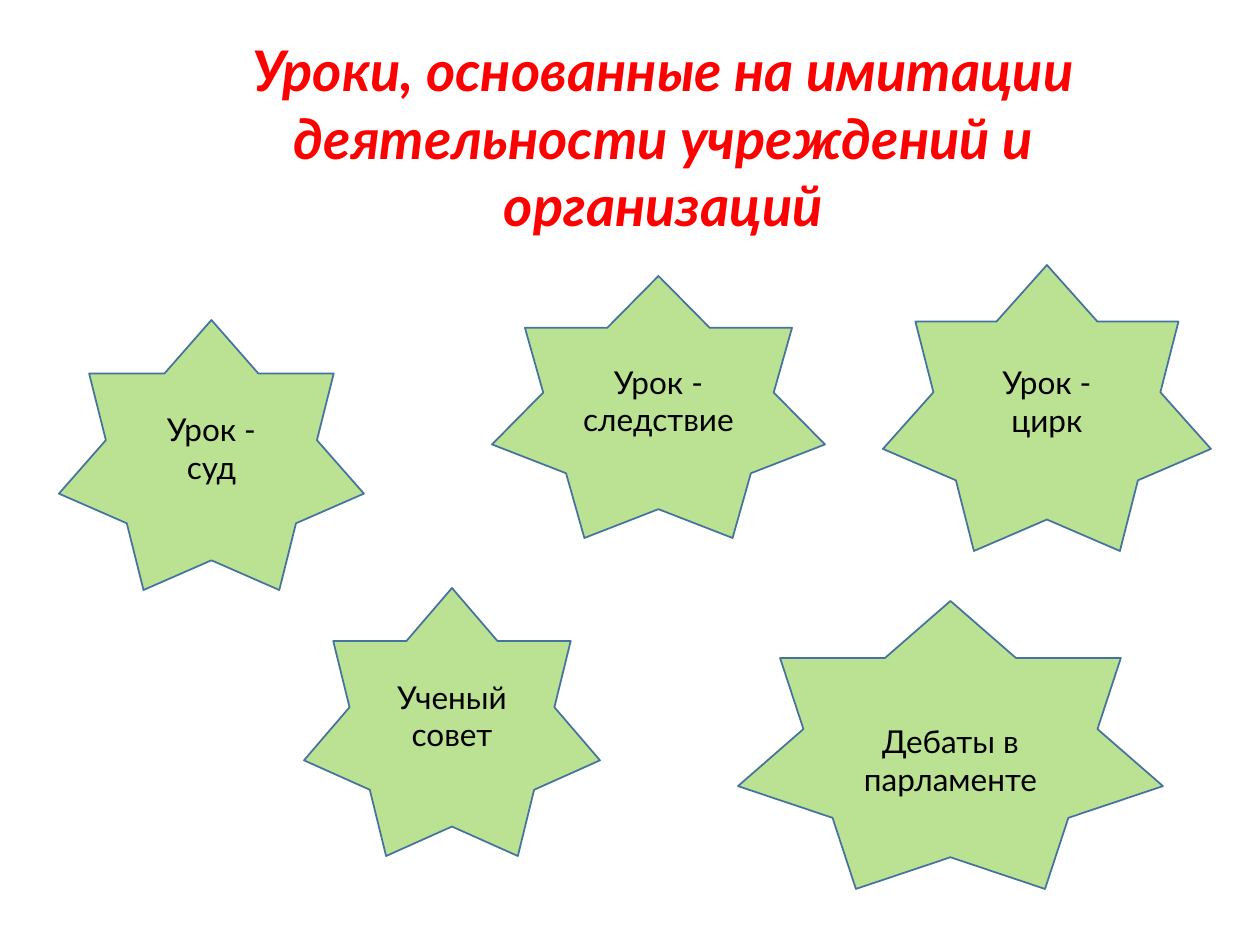
import pptx
import pptx.dml.color
import pptx.enum.shapes
import pptx.enum.text
import pptx.oxml.ns
import pptx.util
from lxml import etree

RED = pptx.dml.color.RGBColor(0xFF, 0x00, 0x00)
BLACK = pptx.dml.color.RGBColor(0x00, 0x00, 0x00)
GREEN = pptx.dml.color.RGBColor(0x92, 0xD0, 0x50)
BLUE = pptx.dml.color.RGBColor(0x43, 0x73, 0x9E)
FONT = "Lato"
INSET = 13
LOWERED_INSET = 50

TITLE = "Уроки, основанные на имитации деятельности учреждений и организаций"
STARS = [
    ("Урок - суд", (59, 320, 305, 270), INSET),
    ("Ученый совет", (304, 588, 296, 268), INSET),
    ("Дебаты в парламенте", (738, 601, 425, 288), LOWERED_INSET),
    ("Урок - следствие", (492, 276, 333, 262), INSET),
    ("Урок - цирк", (883, 265, 328, 286), INSET),
]


def px(length):
    """Turn a length in px into EMU."""
    return pptx.util.Emu(round(length * 914400 / 126))


def write_text(shape, text, *, size, color, bold=False, italic=False,
               anchor=pptx.enum.text.MSO_ANCHOR.TOP, top=6):
    """Write one centred, wrapped paragraph into a shape."""
    frame = shape.text_frame
    frame.word_wrap = True
    frame.vertical_anchor = anchor
    frame.margin_top = px(top)
    para = frame.paragraphs[0]
    para.alignment = pptx.enum.text.PP_ALIGN.CENTER
    span = para.add_run()
    span.text = text
    span.font.name = FONT
    span.font.size = pptx.util.Pt(size)
    span.font.bold = bold
    span.font.italic = italic
    span.font.color.rgb = color


def set_opacity(shape, percent):
    """Make the solid fill of a shape partly transparent."""
    color = shape.fill._xPr.find(".//" + pptx.oxml.ns.qn("a:srgbClr"))
    alpha = etree.SubElement(color, pptx.oxml.ns.qn("a:alpha"))
    alpha.set("val", str(percent * 1000))


def add_title(page, text, box):
    """Place the slide heading in the given box."""
    heading = page.shapes.add_textbox(*map(px, box))
    write_text(heading, text, size=32, color=RED, bold=True, italic=True)


def add_star(page, text, box, top):
    """Place a labelled seven-pointed star in the given box."""
    star = page.shapes.add_shape(
        pptx.enum.shapes.MSO_SHAPE.STAR_7_POINT, *map(px, box))
    star.shadow.inherit = False
    star.fill.solid()
    star.fill.fore_color.rgb = GREEN
    set_opacity(star, 62)
    star.line.color.rgb = BLUE
    star.line.width = pptx.util.Pt(1)
    write_text(star, text, size=18, color=BLACK, top=top,
               anchor=pptx.enum.text.MSO_ANCHOR.MIDDLE)


def main():
    """Build the slide and save the deck."""
    deck = pptx.Presentation()
    deck.slide_width, deck.slide_height = px(1260), px(945)
    page = deck.slides.add_slide(deck.slide_layouts[6])
    add_title(page, TITLE, (137, 30, 1053, 217))
    for text, box, top in STARS:
        add_star(page, text, box, top if top != INSET else 6)
    deck.save("out.pptx")


if __name__ == "__main__":
    main()
